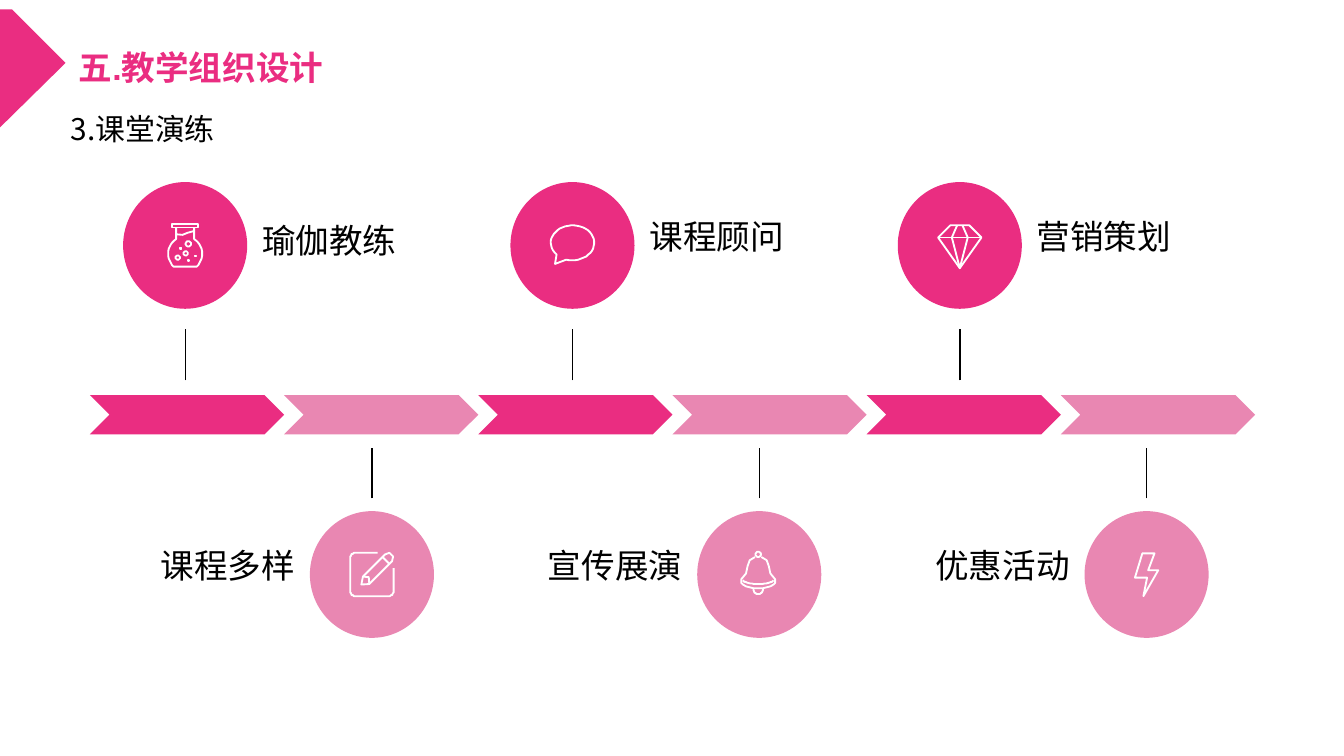
import math

from pptx import Presentation
from pptx import util as u
from pptx.dml.color import RGBColor
from pptx.enum import shapes, text
from pptx.oxml import parse_xml
from pptx.oxml.ns import nsdecls

PINK = RGBColor(0xEA, 0x2D, 0x81)
PALE = RGBColor(0xE9, 0x87, 0xB2)
BLACK = RGBColor(0, 0, 0)
WHITE = RGBColor(255, 255, 255)

WIDE, TALL = 2.31, 2.36  # circle
BOX = 3.66               # label width
STEP = 7.32              # between circles of one row


def arc(x, y, rx, ry, start=0, end=360):
    """Points along an ellipse; degrees run clockwise from the right."""
    count = max(8, abs(end - start) // 8)
    turns = [math.radians(start + (end - start) * i / count) for i in range(count + 1)]
    return [(x + rx * math.cos(t), y + ry * math.sin(t)) for t in turns]


def flip(points):
    return [(-x, y) for x, y in reversed(points)]


# Each icon is a list of (points, closed), in 0.1 mm from the circle's centre.
def flask():
    side = [(-17, -33)] + arc(0, 16, 32, 33, 237, 133)
    dots = [(1, 15, 4), (-14, 23, 4), (6, -3, 5), (-8, 5, 1), (19, 20, 1), (6, 28, 1)]
    return [([(-25, -40), (25, -40), (25, -34), (-25, -34)], True),
            (side + flip(side), False),
            ([(-16, -21), (-5, -20), (5, -24), (16, -27)], False),
            ] + [(arc(x, y, r, r), True) for x, y, r in dots]


def bubble():
    return [(arc(0, -5, 41, 33, 107, -222) + [(-33, 35)], True)]


def gem():
    return [([(-18, -38), (18, -38), (41, -15), (0, 43), (-41, -15)], True),
            ([(-41, -15), (41, -15)], False),
            ([(-5, -38), (-15, -15), (0, 43), (15, -15), (5, -38)], False)]


def pencil():
    frame = [(11, -41)]
    for x, y, turn in [(-31, -31, 270), (-31, 31, 180), (31, 31, 90)]:
        frame += arc(x, y, 10, 10, turn, turn - 90)
    return [(frame + [(41, -12)], False),
            ([(-20, 19), (-17, 4), (25, -38), (33, -41), (40, -34), (38, -25), (-5, 18)], True),
            ([(20, -33), (33, -20)], False),
            ([(-17, 4), (-6, 5), (-5, 18)], False)]


def bell():
    side = [(-6, -33), (-16, -27), (-20, -16), (-23, -2), (-32, 9)]
    parts = [(arc(0, -38, 5, 5), True),
             (side + arc(0, 14, 32, 12, 180, 0) + flip(side), False),
             (arc(0, 10, 29, 8, 170, 10), False),
             (arc(0, 27, 9, 10, 180, 0), False)]
    return [([(x - 2, y) for x, y in points], closed) for points, closed in parts]


def bolt():
    return [([(-8, -40), (15, -40), (3, -8), (22, -8), (-6, 41), (1, 6), (-22, 6)], True)]


class Deck:
    def __init__(self, font):
        self.font = font
        self.file = Presentation()
        self.file.slide_width, self.file.slide_height = u.Cm(25.4), u.Cm(14.29)
        self.slide = self.file.slides.add_slide(self.file.slide_layouts[6])
        self.items = self.slide.shapes

    def paint(self, item, fill=None, line=None):
        item.shadow.inherit = False
        if fill is None:
            item.fill.background()
        else:
            item.fill.solid()
            item.fill.fore_color.rgb = fill
        if line is None:
            item.line.fill.background()
        else:
            item.line.color.rgb = line
            item.line.width = u.Pt(1)

    def shape(self, kind, x, y, w, h, fill, line=None):
        item = self.items.add_shape(kind, u.Cm(x), u.Cm(y), u.Cm(w), u.Cm(h))
        self.paint(item, fill, line)

    def outline(self, parts, x, y, fill=None, line=None):
        """Draw (points, closed) contours, in 0.1 mm, around x, y."""
        pen = self.items.build_freeform(*parts[0][0][0], scale=u.Cm(0.01))
        for points, closed in parts:
            pen.move_to(*points[0])
            pen.add_line_segments(points[1:], close=closed)
        self.paint(pen.convert_to_shape(u.Cm(x), u.Cm(y)), fill, line)

    def stem(self, x, top, end):
        item = self.items.add_connector(
            shapes.MSO_CONNECTOR.STRAIGHT, u.Cm(x), u.Cm(end), u.Cm(x), u.Cm(top))
        item.line.color.rgb = BLACK
        item.line.width = u.Pt(0.75)
        item._element.spPr.append(parse_xml(f"<a:effectLst {nsdecls('a')}/>"))

    def label(self, words, x, y, w, h, size=18, color=BLACK, bold=False, font=None,
              right=False, space=None, before=None, left_pad=0.25, right_pad=0.25, grow=False):
        frame = self.items.add_textbox(u.Cm(x), u.Cm(y), u.Cm(w), u.Cm(h)).text_frame
        frame.word_wrap = True
        frame.margin_left, frame.margin_right = u.Cm(left_pad), u.Cm(right_pad)
        if grow:
            frame.auto_size = text.MSO_AUTO_SIZE.SHAPE_TO_FIT_TEXT
        para = frame.paragraphs[0]
        para.alignment = text.PP_ALIGN.RIGHT if right else text.PP_ALIGN.LEFT
        para.line_spacing = space
        para.space_before = before
        run = para.add_run()
        run.text = words
        run.font.size, run.font.bold = u.Pt(size), bold
        run.font.name = font or self.font
        run.font.color.rgb = color

    def badge(self, x, y, color, icon):
        self.shape(shapes.MSO_SHAPE.OVAL, x - WIDE / 2, y - TALL / 2, WIDE, TALL, color, color)
        self.outline(icon, x, y, line=WHITE)


def main():
    deck = Deck("Arial")
    deck.outline([([(0, 18), (23, 18), (124, 119), (0, 241)], True)], 0, 0, fill=PINK)
    deck.label("五.教学组织设计", 1.24, 0.61, 10.6, 1.1, color=PINK, bold=True,
               space=1.2, before=u.Pt(10), grow=True)
    deck.label("3.课堂演练", 1.09, 1.96, 12.7, 0.94, size=16,
               font="Noto Sans CJK SC", grow=True)

    for i in range(6):
        deck.shape(shapes.MSO_SHAPE.CHEVRON, 1.7 + 3.67 * i, 7.47, 3.67, 0.74,
                   PALE if i % 2 else PINK)

    upper = [("瑜伽教练", flask(), 3.89), ("课程顾问", bubble(), 3.81), ("营销策划", gem(), 3.81)]
    for i, (words, icon, top) in enumerate(upper):
        x = 3.5 + STEP * i
        deck.badge(x, 4.64, PINK, icon)
        deck.stem(x, 6.22, 7.19)
        deck.label(words, x + WIDE / 2, top, BOX, 1.65, space=1.2, left_pad=0.3)

    lower = [("课程多样", pencil()), ("宣传展演", bell()), ("优惠活动", bolt())]
    for i, (words, icon) in enumerate(lower):
        x = 7.03 + STEP * i
        deck.badge(x, 10.86, PALE, icon)
        deck.stem(x, 8.46, 9.42)
        deck.label(words, x - WIDE / 2 - BOX, 10.03, BOX, 1.65, space=1.2,
                   right=True, right_pad=0.3)

    deck.file.save("out.pptx")


if __name__ == "__main__":
    main()
